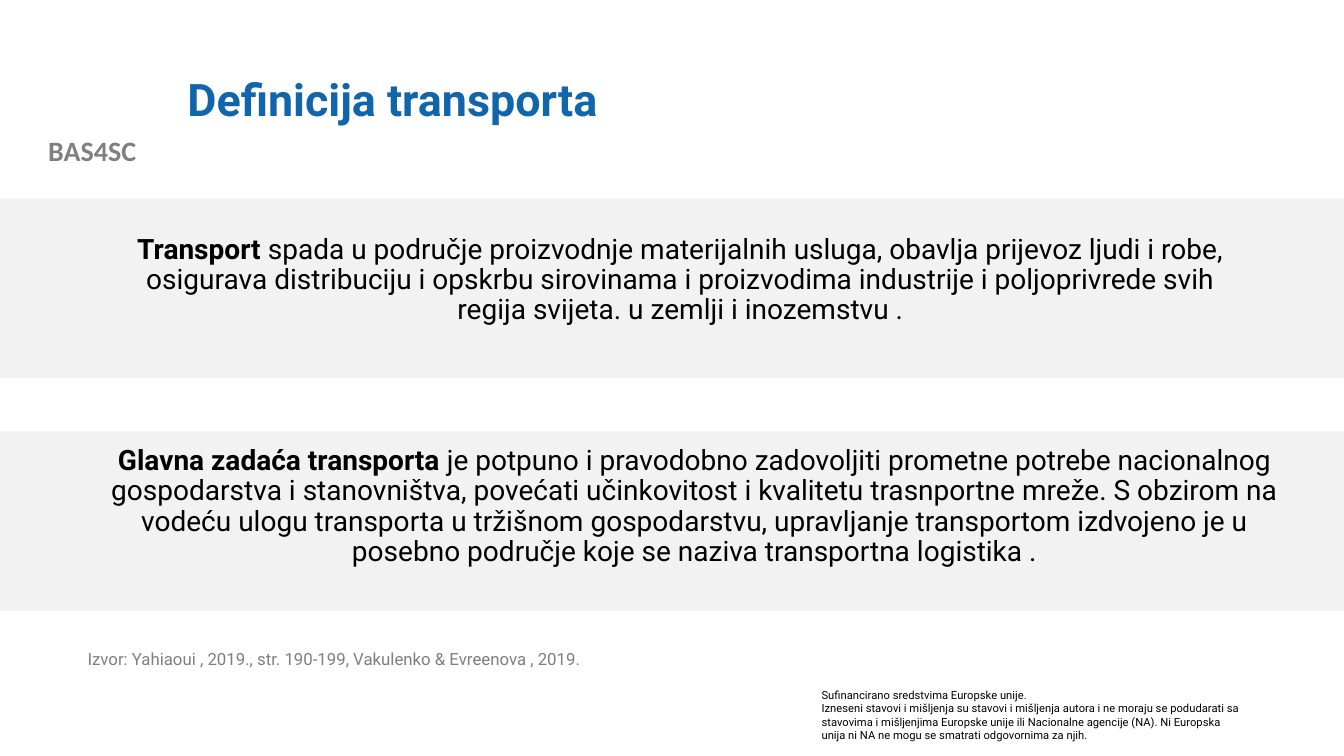
"""Build the slide that defines transport and its main task."""
from pptx import Presentation
from pptx import util as u
from pptx.dml.color import RGBColor
from pptx.enum import shapes, text
from pptx.oxml.ns import qn

BLUE = RGBColor(0x10, 0x65, 0xAB)
BLACK = RGBColor(0, 0, 0)
GRAY = RGBColor(0x80, 0x80, 0x80)
SOURCE_GRAY = RGBColor(0x7F, 0x7F, 0x7F)
BAND_GRAY = RGBColor(0xF2, 0xF2, 0xF2)
LEFT, CENTER = text.PP_ALIGN.LEFT, text.PP_ALIGN.CENTER
TOP, MIDDLE = text.MSO_ANCHOR.TOP, text.MSO_ANCHOR.MIDDLE

deck = Presentation()
deck.slide_width, deck.slide_height = u.Inches(13.33), u.Inches(7.5)
slide = deck.slides.add_slide(deck.slide_layouts[1])
heading, definition = slide.placeholders


def area(left, top, width, height):
    """Turn percentages of the slide into lengths."""
    across, down = deck.slide_width / 100, deck.slide_height / 100
    return [round(n) for n in (left * across, top * down, width * across, height * down)]


def write(holder, place, paragraphs, size, color, align=LEFT, spacing=0.9, font="Roboto", anchor=TOP):
    """Place a text holder and fill it with paragraphs of (words, bold) runs."""
    holder.left, holder.top, holder.width, holder.height = area(*place)
    frame = holder.text_frame
    frame.word_wrap = True
    frame.auto_size = text.MSO_AUTO_SIZE.NONE
    frame.vertical_anchor = anchor
    for number, runs in enumerate(paragraphs):
        paragraph = frame.add_paragraph() if number else frame.paragraphs[0]
        paragraph.alignment = align
        paragraph.line_spacing = spacing
        paragraph.space_before = u.Pt(0)
        for words, bold in runs:
            run = paragraph.add_run()
            run.text = words
            run.font.name = font
            run.font.size = u.Pt(size)
            run.font.bold = bold
            run.font.color.rgb = color


for band_top in (57.07, 26.27):
    band = slide.shapes.add_shape(shapes.MSO_SHAPE.RECTANGLE, *area(0, band_top, 100, 23.73))
    band.shadow.inherit = False
    band.fill.solid()
    band.fill.fore_color.rgb = BAND_GRAY
    band.line.fill.background()
    heading.element.addprevious(band.element)

write(heading, (13.2, 5.33, 79.97, 16.27), [[("Definicija transporta", True)]], 32, BLUE, anchor=MIDDLE)

definition_format = definition.text_frame.paragraphs[0]._p.get_or_add_pPr()
definition_format.set("marL", "0")
definition_format.set("indent", "0")
definition_format.append(definition_format.makeelement(qn("a:buNone"), {}))
write(definition, (7.5, 30.4, 86.27, 22.53), [[
    ("Transport ", True),
    ("spada u područje proizvodnje materijalnih usluga, obavlja prijevoz ljudi i robe, "
     "osigurava distribuciju i opskrbu sirovinama i proizvodima industrije i poljoprivrede "
     "svih regija svijeta. u zemlji i inozemstvu .", False),
]], 20, BLACK, CENTER)

main_task, citation, project, funding = (slide.shapes.add_textbox(0, 0, 0, 0) for _ in range(4))
write(main_task, (6.98, 58.4, 89.42, 22.53), [[
    ("Glavna zadaća transporta ", True),
    ("je potpuno i pravodobno zadovoljiti prometne potrebe nacionalnog gospodarstva i "
     "stanovništva, povećati učinkovitost i kvalitetu trasnportne mreže. S obzirom na vodeću "
     "ulogu transporta u tržišnom gospodarstvu, upravljanje transportom izdvojeno je u "
     "posebno područje koje se naziva transportna logistika .", False),
]], 20, BLACK, CENTER)
write(citation, (5.78, 85.47, 42.01, 6.93), [[
    ("Izvor: Yahiaoui , 2019., str. 190-199, Vakulenko & Evreenova , 2019.", False),
]], 12, SOURCE_GRAY)
write(project, (0, 17.07, 13.73, 5.87), [[("BAS4SC", True)]], 20, GRAY, CENTER, 1.0, "Calibri")
write(funding, (60.39, 90.4, 32.78, 8.53), [
    [("Sufinancirano sredstvima Europske unije.", False)],
    [("Izneseni stavovi i mišljenja su stavovi i mišljenja autora i ne moraju se podudarati sa "
      "stavovima i mišljenjima Europske unije ili Nacionalne agencije (NA). Ni Europska unija "
      "ni NA ne mogu se smatrati odgovornima za njih.", False)],
], 8, BLACK, spacing=1.0)

deck.save("out.pptx")
